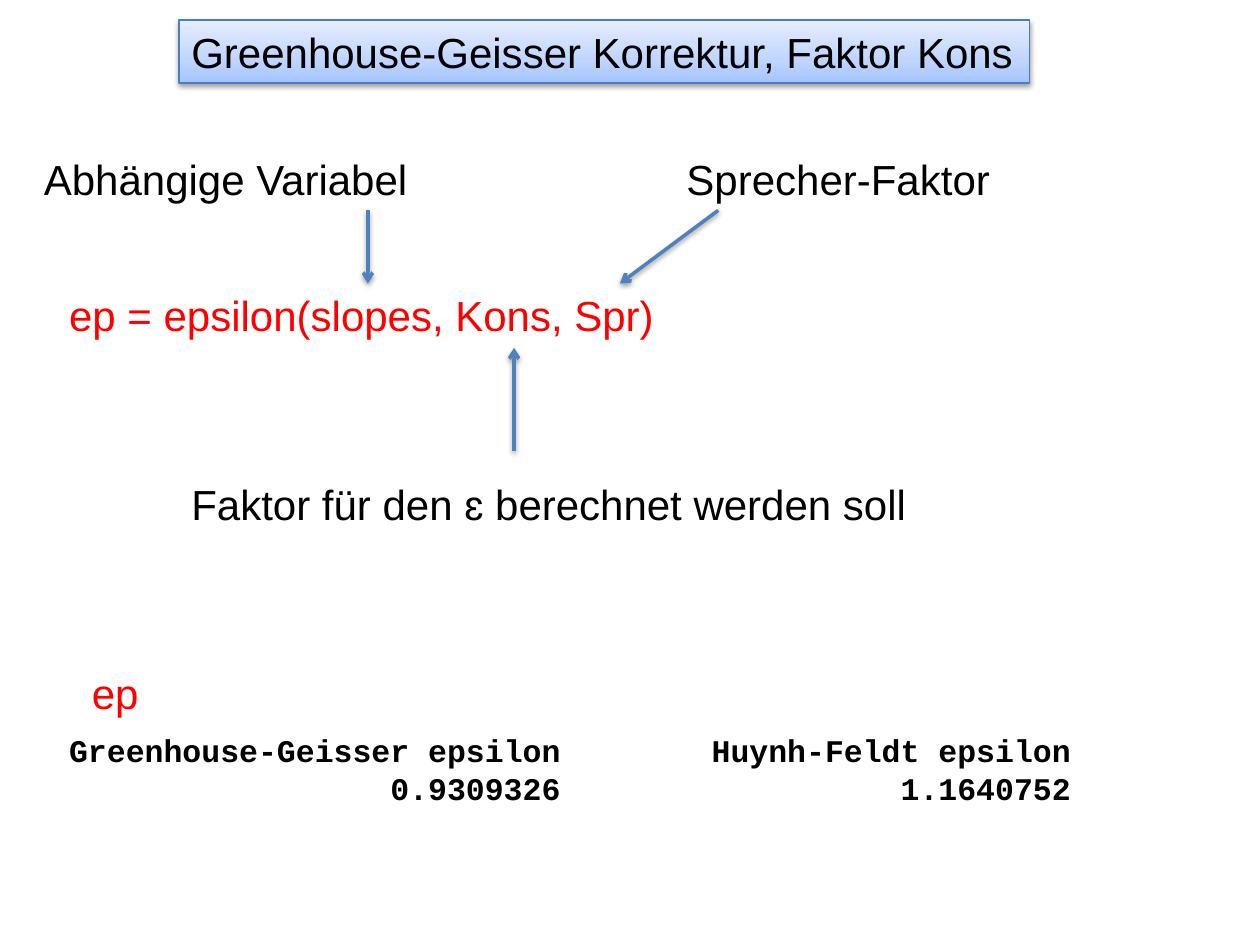
from lxml import etree
from pptx import Presentation
from pptx.dml.color import RGBColor
from pptx.enum.shapes import MSO_CONNECTOR as Connector, MSO_SHAPE as Shape
from pptx.enum.text import MSO_AUTO_SIZE as AutoSize, PP_ALIGN as Align
from pptx.oxml.ns import qn
from pptx.util import Inches, Pt

BLACK, RED, BLUE = "000000", "FF0000", "4F81BD"
LABEL = {"name": "Arial", "size": Pt(24), "bold": False}
OUTPUT = {"name": "Courier New", "size": Pt(18), "bold": True}


def color(value):
    return RGBColor.from_string(value)


def add_child(parent, tag, **attributes):
    return etree.SubElement(parent, qn(tag), attributes)


def add_shadow(shape):
    """Soft shadow straight below; call after fill and line are set."""
    effects = add_child(shape.element.spPr, "a:effectLst")
    shadow = add_child(effects, "a:outerShdw", blurRad=str(Pt(3.1)), dist=str(Pt(1.6)),
                       dir="5400000", rotWithShape="0")
    add_child(add_child(shadow, "a:srgbClr", val=BLACK), "a:alpha", val="38000")


def write(shape, lines, style, text_color=BLACK, wrap=True):
    frame = shape.text_frame
    frame.word_wrap = wrap
    frame.auto_size = AutoSize.SHAPE_TO_FIT_TEXT
    for index, line in enumerate(lines):
        paragraph = frame.add_paragraph() if index else frame.paragraphs[0]
        paragraph.alignment = Align.LEFT
        run = paragraph.add_run()
        run.text = line
        for name, value in style.items():
            setattr(run.font, name, value)
        run.font.color.rgb = color(text_color)
    return frame


def add_text(slide, box, lines, style=LABEL, text_color=BLACK, wrap=True):
    shape = slide.shapes.add_textbox(*map(Inches, box))
    return write(shape, lines, style, text_color, wrap)


def add_arrow(slide, start, end):
    arrow = slide.shapes.add_connector(Connector.STRAIGHT, *map(Inches, start + end))
    arrow.line.color.rgb = color(BLUE)
    arrow.line.width = Pt(2)
    add_child(arrow.element.spPr.find(qn("a:ln")), "a:tailEnd", type="arrow")
    add_shadow(arrow)


def add_title(slide, box):
    title = slide.shapes.add_shape(Shape.RECTANGLE, *map(Inches, box))
    title.fill.gradient()
    title.fill.gradient_angle = 90
    stops = title.element.spPr.find(qn("a:gradFill")).find(qn("a:gsLst"))
    for stop in list(stops):
        stops.remove(stop)
    for percent, value in ((0, "A4C4FF"), (35, "BFD4FF"), (100, "E6EEFF")):
        stop = add_child(stops, "a:gs", pos=str(percent * 1000))
        add_child(stop, "a:srgbClr", val=value)
    title.line.color.rgb = color("4B7EBC")
    title.line.width = Pt(0.75)
    add_shadow(title)
    write(title, ["Greenhouse-Geisser Korrektur, Faktor Kons"], LABEL)


def add_call_diagram(slide, box):
    """The function call with a label and an arrow for each argument."""
    left, top, width, height = box
    call_top, label_height = top + 1.08, 0.5
    # Call and argument labels
    add_text(slide, (left + 0.2, call_top, 5.25, label_height),
             ["ep = epsilon(slopes, Kons, Spr)"], text_color=RED)
    add_text(slide, (left + 1.17, top + height - label_height, 5.93, label_height),
             ["Faktor für den ɛ berechnet werden soll"], wrap=False)
    add_text(slide, (left, top, 3.17, label_height), ["Abhängige Variabel"])
    add_text(slide, (left + width - 2.63, top, 2.63, label_height),
             ["Sprecher-Faktor"], wrap=False)
    # Arrows to the arguments
    label_bottom = top + label_height
    add_arrow(slide, (left + 3.83, top + 2.41), (left + 3.83, call_top + 0.51))
    add_arrow(slide, (left + 2.67, label_bottom), (left + 2.67, call_top))
    add_arrow(slide, (left + 5.45, label_bottom), (left + 4.67, call_top))


def add_result(slide, box):
    """The variable name and its printed values in right-aligned columns."""
    left, top, width, height = box
    add_text(slide, (left + 0.18, top, 0.58, 0.5), ["ep"], text_color=RED, wrap=False)
    lines = ["Greenhouse-Geisser epsilon\tHuynh-Feldt epsilon", "\t0.9309326\t1.1640752"]
    frame = add_text(slide, (left, top + 0.5, width, height - 0.5), lines, OUTPUT)
    for paragraph, columns in zip(frame.paragraphs, ((7.95,), (3.9, 7.95))):
        tabs = add_child(paragraph._p.get_or_add_pPr(), "a:tabLst")
        for position in columns:
            add_child(tabs, "a:tab", pos=str(Inches(position)), algn="r")


def main():
    presentation = Presentation()
    presentation.slide_width, presentation.slide_height = Inches(10), Inches(7.5)
    slide = presentation.slides.add_slide(presentation.slide_layouts[6])
    add_title(slide, (1.42, 0.16, 6.75, 0.5))
    add_call_diagram(slide, (0.25, 1.17, 7.73, 3.08))
    add_result(slide, (0.45, 5.25, 8.97, 1.21))
    presentation.save("out.pptx")


if __name__ == "__main__":
    main()
